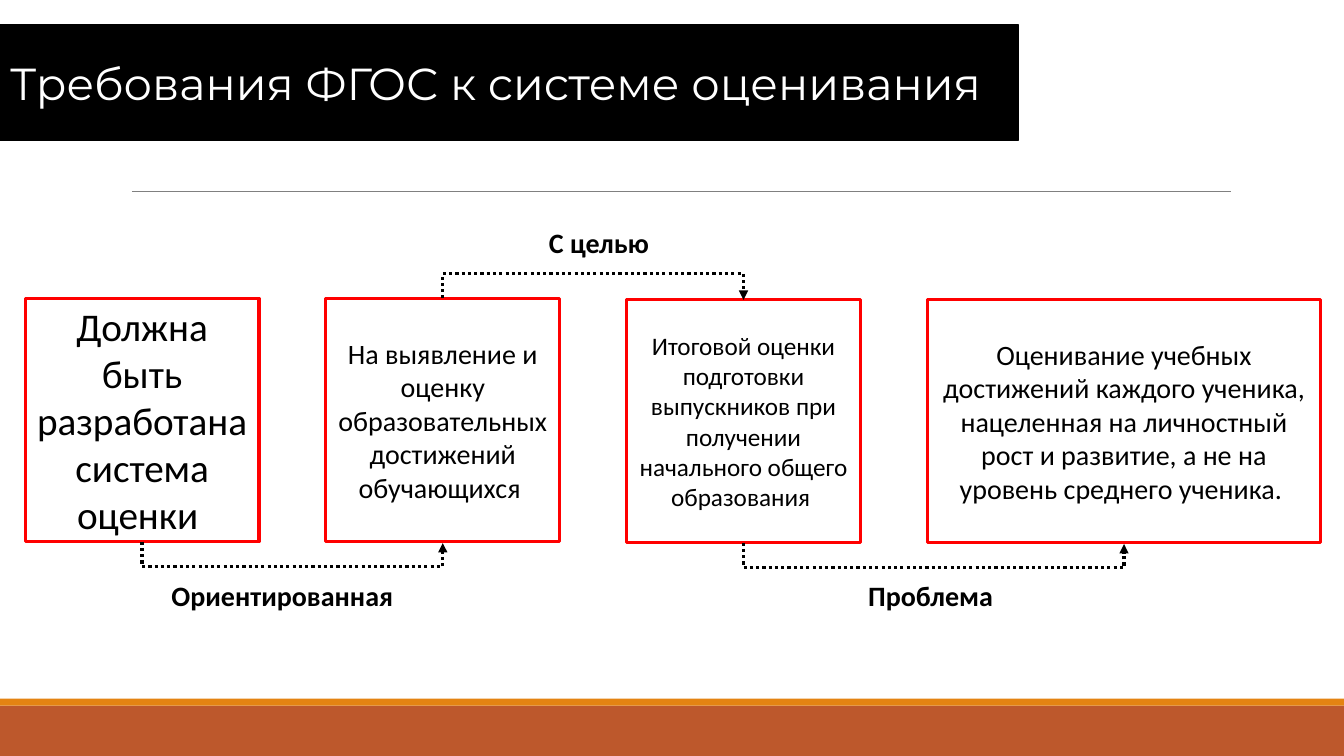
from lxml import etree
from pptx import Presentation
from pptx.dml.color import RGBColor
from pptx.enum.dml import MSO_LINE
from pptx.enum.shapes import MSO_CONNECTOR, MSO_SHAPE
from pptx.enum.text import MSO_ANCHOR, MSO_AUTO_SIZE, PP_ALIGN
from pptx.oxml.ns import qn
from pptx.util import Pt

BLACK = RGBColor(0x00, 0x00, 0x00)
WHITE = RGBColor(0xFF, 0xFF, 0xFF)
RED = RGBColor(0xFF, 0x00, 0x00)
GRAY = RGBColor(0x80, 0x80, 0x80)
RUST = RGBColor(0xBD, 0x58, 0x2C)
ORANGE = RGBColor(0xE4, 0x83, 0x12)

SLIDE_W, SLIDE_H = 960, 540
TOP, BOTTOM, LEFT, RIGHT = range(4)  # connection sites of a rectangle

# text, font size, width, top offset
STEPS = [
    ("Должна быть разработана система оценки ", 28, 167, 0),
    ("На выявление и оценку образовательных достижений обучающихся ", 20, 167, 0),
    ("Итоговой оценки подготовки выпускников при получении "
     "начального общего образования ", 18, 167, 0.7),
    ("Оценивание учебных достижений каждого ученика, нацеленная на личностный "
     "рост и развитие, а не на уровень среднего ученика. ", 20, 281, 0.7),
]


def add_rect(slide, x, y, w, h, fill, line=None, line_w=1.25):
    sp = slide.shapes.add_shape(MSO_SHAPE.RECTANGLE, Pt(x), Pt(y), Pt(w), Pt(h))
    sp.shadow.inherit = False
    sp.fill.solid()
    sp.fill.fore_color.rgb = fill
    if line is None:
        sp.line.fill.background()
    else:
        sp.line.color.rgb = line
        sp.line.width = Pt(line_w)
    return sp


def set_text(sp, text, size, font="Calibri", color=BLACK, bold=False,
             align=PP_ALIGN.CENTER, anchor=MSO_ANCHOR.MIDDLE, wrap=True):
    tf = sp.text_frame
    tf.auto_size = MSO_AUTO_SIZE.NONE
    tf.word_wrap = wrap
    tf.vertical_anchor = anchor
    p = tf.paragraphs[0]
    p.text = text
    p.alignment = align
    p.font.name = font
    p.font.size = Pt(size)
    p.font.bold = bold
    p.font.color.rgb = color


def style_line(conn, color, width):
    conn.line.color.rgb = color
    conn.line.width = Pt(width)
    etree.SubElement(conn._element.spPr, qn("a:effectLst"))


def add_bent_arrow(slide, start, end, site, bend=18, rise=1):
    """Join the same side of two boxes, bending out by `bend` points."""
    conn = slide.shapes.add_connector(MSO_CONNECTOR.ELBOW, 0, 0, 0, 0)
    conn.begin_connect(start, site)
    conn.end_connect(end, site)
    x1, x2 = (b.left.pt + b.width.pt / 2 for b in (start, end))
    y = start.top.pt + (start.height.pt if site == BOTTOM else 0)
    span = x2 - x1

    # A quarter turn: the unrotated frame is `rise` wide and `span` high.
    conn.left, conn.top = Pt((x1 + x2 - rise) / 2), Pt(y + (rise - span) / 2)
    conn.width, conn.height = Pt(rise), Pt(span)
    xfrm = conn._element.spPr.xfrm
    xfrm.set("rot", "16200000")
    xfrm.flipH, xfrm.flipV = True, False
    offset = bend if site == BOTTOM else -bend
    guides = conn._element.spPr.find(qn("a:prstGeom")).get_or_add_avLst()
    etree.SubElement(guides, qn("a:gd"), name="adj1",
                     fmla=f"val {round(offset / rise * 100000)}")

    conn.line.dash_style = MSO_LINE.ROUND_DOT
    style_line(conn, BLACK, 2.25)
    etree.SubElement(conn.line._get_or_add_ln(), qn("a:tailEnd"), type="triangle")


def add_title(slide, x, y, w, h):
    title = slide.shapes.title
    title.left, title.top, title.width, title.height = Pt(x), Pt(y), Pt(w), Pt(h)
    title.fill.solid()
    title.fill.fore_color.rgb = BLACK
    title.line.color.rgb = BLACK
    title.line.width = Pt(1.25)
    set_text(title, "Требования ФГОС к системе оценивания", 32,
             font="Montserrat", color=WHITE, align=PP_ALIGN.LEFT)


def add_rule(slide, x, y, w):
    conn = slide.shapes.add_connector(
        MSO_CONNECTOR.STRAIGHT, Pt(x), Pt(y), Pt(x + w), Pt(y))
    style_line(conn, GRAY, 0.5)


def add_footer(slide, x, y, w, h, stripe=5):
    add_rect(slide, x, y + stripe, w, h - stripe, RUST)
    add_rect(slide, x, y, w, stripe, ORANGE)


def add_label(slide, x, y, w, h, text):
    set_text(add_rect(slide, x, y, w, h, WHITE, WHITE), text, 20,
             bold=True, anchor=MSO_ANCHOR.TOP)


def add_goal_label(slide, x, y, w, h):
    box = slide.shapes.add_textbox(Pt(x), Pt(y), Pt(w), Pt(h))
    set_text(box, "С целью", 20, bold=True, align=PP_ALIGN.LEFT,
             anchor=MSO_ANCHOR.TOP, wrap=False)


def add_flow(slide, x, y, h, pitch=214.8):
    boxes = []
    for i, (text, size, w, dy) in enumerate(STEPS):
        box = add_rect(slide, x + i * pitch, y + dy, w, h, WHITE, RED, 2.25)
        set_text(box, text, size)
        boxes.append(box)

    label_y = y + h + 23
    add_bent_arrow(slide, boxes[0], boxes[1], BOTTOM)
    add_label(slide, x + 83.5, label_y, 205, 31.5, "Ориентированная ")
    add_bent_arrow(slide, boxes[1], boxes[2], TOP)
    add_goal_label(slide, x + 367, y - 56, 86.5, 31.5)
    add_bent_arrow(slide, boxes[2], boxes[3], BOTTOM)
    add_label(slide, x + 571, label_y, 156, 31.5, "Проблема ")


def main():
    prs = Presentation()
    prs.slide_width, prs.slide_height = Pt(SLIDE_W), Pt(SLIDE_H)
    slide = prs.slides.add_slide(prs.slide_layouts.get_by_name("Title Only"))
    add_footer(slide, 0, 499, SLIDE_W, 41)
    add_rule(slide, 94.3, 136.8, 784.8)
    add_title(slide, 0, 18, 727.5, 82)
    add_flow(slide, 18, 213.2, 173.7)
    prs.save("out.pptx")


if __name__ == "__main__":
    main()
